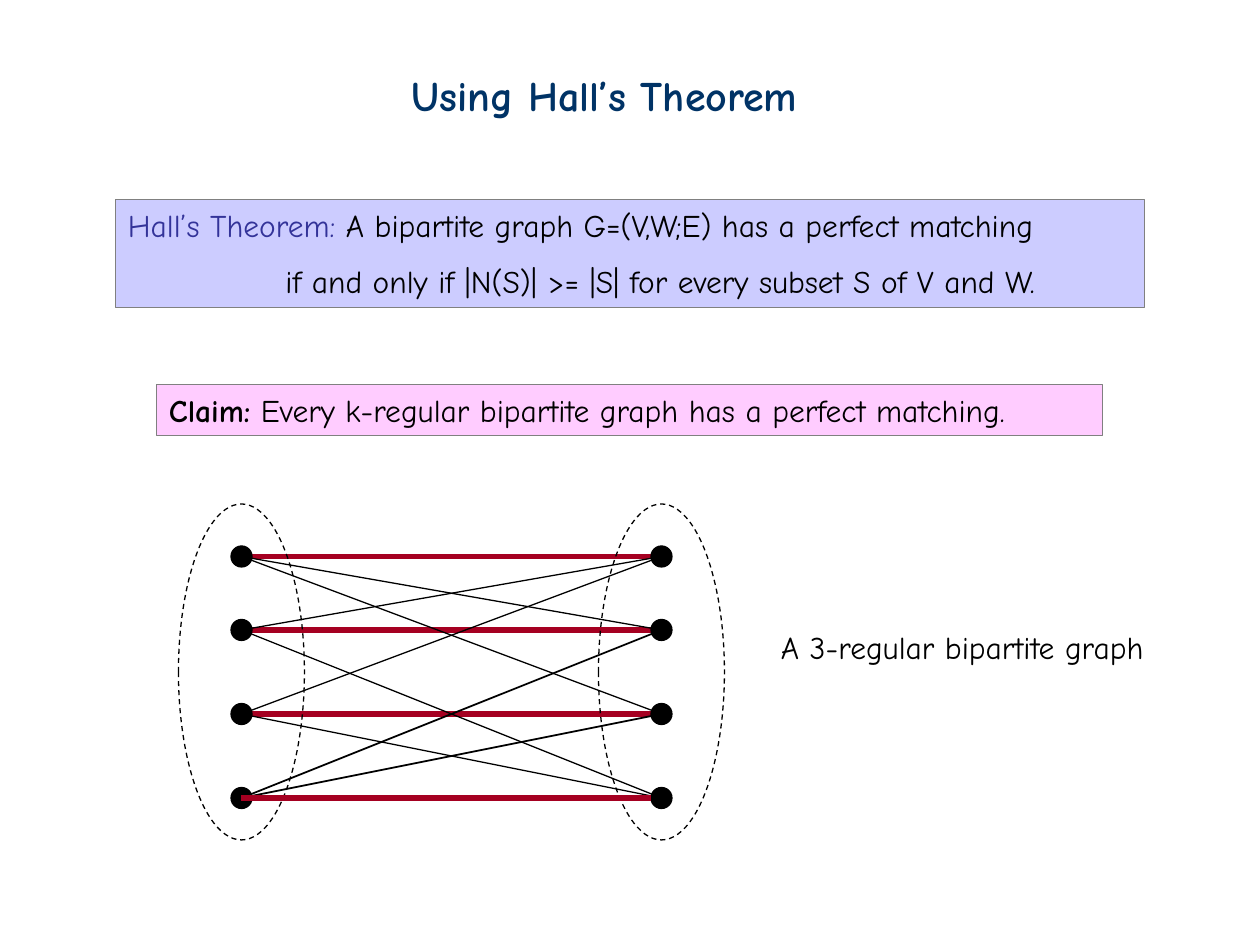
from dataclasses import dataclass

from lxml import etree
from pptx import Presentation, util as u
from pptx.dml.color import RGBColor
from pptx.enum import dml, shapes, text
from pptx.oxml.ns import qn

COLUMNS, ROWS = 120, 90
CELL = u.Inches(10) // COLUMNS
LEFT_COLUMN, RIGHT_COLUMN = 23, 63
NODE_ROWS = (53, 60, 68, 76)
NODE_SIZE = 2
SIDE_WIDTH, SIDE_HEIGHT, SIDE_TOP = 12, 32, 48
BACK_EDGES = ((3, 1), (3, 2))
FRONT_EDGES = ((0, 1), (0, 2), (1, 0), (1, 3), (2, 0), (2, 3))


@dataclass(frozen=True)
class Theme:
    font: str = "Comic Neue"
    title_size: int = 24
    body_size: int = 18
    title: str = "003366"
    ink: str = "000000"
    term: str = "333399"
    theorem_fill: str = "CCCCFF"
    claim_fill: str = "FFCCFF"
    border: str = "808080"
    matching: str = "A50021"
    thin: float = 0.75
    medium: float = 1
    thick: float = 3


THEME = Theme()


def grid(*cells):
    return [round(cell * CELL) for cell in cells]


def add_run(paragraph, content, *, size=THEME.body_size, color=THEME.ink, bold=False):
    run = paragraph.add_run()
    run.text = content
    run.font.name = THEME.font
    run.font.size = u.Pt(size)
    run.font.bold = bold
    run.font.color.rgb = RGBColor.from_string(color)


def prepare_frame(shape):
    frame = shape.text_frame
    frame.word_wrap = True
    frame.auto_size = text.MSO_AUTO_SIZE.NONE
    frame.vertical_anchor = text.MSO_ANCHOR.TOP
    frame.paragraphs[0].alignment = text.PP_ALIGN.LEFT
    return frame


def add_title(slide, content, box):
    title = slide.shapes.title
    title.left, title.top, title.width, title.height = grid(*box)
    paragraph = prepare_frame(title).paragraphs[0]
    paragraph.line_spacing = 1
    paragraph.space_before = u.Pt(0)
    add_run(paragraph, content, size=THEME.title_size, color=THEME.title, bold=True)


def add_label(slide, content, box):
    label = slide.shapes.add_textbox(*grid(*box))
    add_run(prepare_frame(label).paragraphs[0], content)


def add_figure(slide, kind, box, *, fill=None, line=THEME.ink, dashed=False):
    shape = slide.shapes.add_shape(kind, *grid(*box))
    shape.shadow.inherit = False
    if fill:
        shape.fill.solid()
        shape.fill.fore_color.rgb = RGBColor.from_string(fill)
    else:
        shape.fill.background()
    shape.line.color.rgb = RGBColor.from_string(line)
    shape.line.width = u.Pt(THEME.thin)
    if dashed:
        shape.line.dash_style = dml.MSO_LINE.DASH
    return shape


def add_statement(slide, term, statement, box, *, fill, color=THEME.ink, bold=False):
    shape = add_figure(slide, shapes.MSO_SHAPE.RECTANGLE, box, fill=fill, line=THEME.border)
    frame = prepare_frame(shape)
    add_run(frame.paragraphs[0], term, color=color, bold=bold)
    add_run(frame.paragraphs[0], " " + statement)
    return frame


def add_continuation(frame, content, indent):
    paragraph = frame.add_paragraph()
    paragraph.alignment = text.PP_ALIGN.LEFT
    paragraph.line_spacing = 1.5
    paragraph._p.get_or_add_pPr().set("marL", str(indent * CELL))
    add_run(paragraph, content)


def add_edge(slide, start, end, *, color=THEME.ink, width=THEME.thin):
    points = grid(LEFT_COLUMN, NODE_ROWS[start], RIGHT_COLUMN, NODE_ROWS[end])
    edge = slide.shapes.add_connector(shapes.MSO_CONNECTOR.STRAIGHT, *points)
    edge.line.color.rgb = RGBColor.from_string(color)
    edge.line.width = u.Pt(width)
    etree.SubElement(edge._element.spPr, qn("a:effectLst"))
    return edge


def add_matching_edge(slide, row):
    return add_edge(slide, row, row, color=THEME.matching, width=THEME.thick)


def add_side(slide, column):
    oval = shapes.MSO_SHAPE.OVAL
    for row in NODE_ROWS:
        box = (column - NODE_SIZE / 2, row - NODE_SIZE / 2, NODE_SIZE, NODE_SIZE)
        add_figure(slide, oval, box, fill=THEME.ink)
    box = (column - SIDE_WIDTH / 2, SIDE_TOP, SIDE_WIDTH, SIDE_HEIGHT)
    add_figure(slide, oval, box, dashed=True)


def add_bipartite_graph(slide):
    last = len(NODE_ROWS) - 1
    for row in range(last):
        add_matching_edge(slide, row)
    for start, end in BACK_EDGES:
        add_edge(slide, start, end, width=THEME.medium)
    for column in (LEFT_COLUMN, RIGHT_COLUMN):
        add_side(slide, column)
    for start, end in FRONT_EDGES:
        add_edge(slide, start, end)
    last_edge = add_matching_edge(slide, last)
    last_edge.end_x -= NODE_SIZE * CELL // 2


def main():
    presentation = Presentation()
    presentation.slide_width, presentation.slide_height = grid(COLUMNS, ROWS)
    slide = presentation.slides.add_slide(presentation.slide_layouts[5])

    add_title(slide, "Using Hall’s Theorem", (38, 6, 43, 6))
    add_statement(
        slide, "Claim:", "Every k-regular bipartite graph has a perfect matching.",
        (14.9, 36.6, 90.1, 4.9), fill=THEME.claim_fill, bold=True,
    )
    add_bipartite_graph(slide)
    add_label(slide, "A 3-regular bipartite graph", (73.2, 59.2, 40.8, 4.8))
    theorem = add_statement(
        slide, "Hall’s Theorem:", "A bipartite graph G=(V,W;E) has a perfect matching",
        (11, 19, 98, 10.3), fill=THEME.theorem_fill, color=THEME.term,
    )
    add_continuation(
        theorem, "if and only if |N(S)| >= |S| for every subset S of V and W.", indent=15
    )
    presentation.save("out.pptx")


if __name__ == "__main__":
    main()
